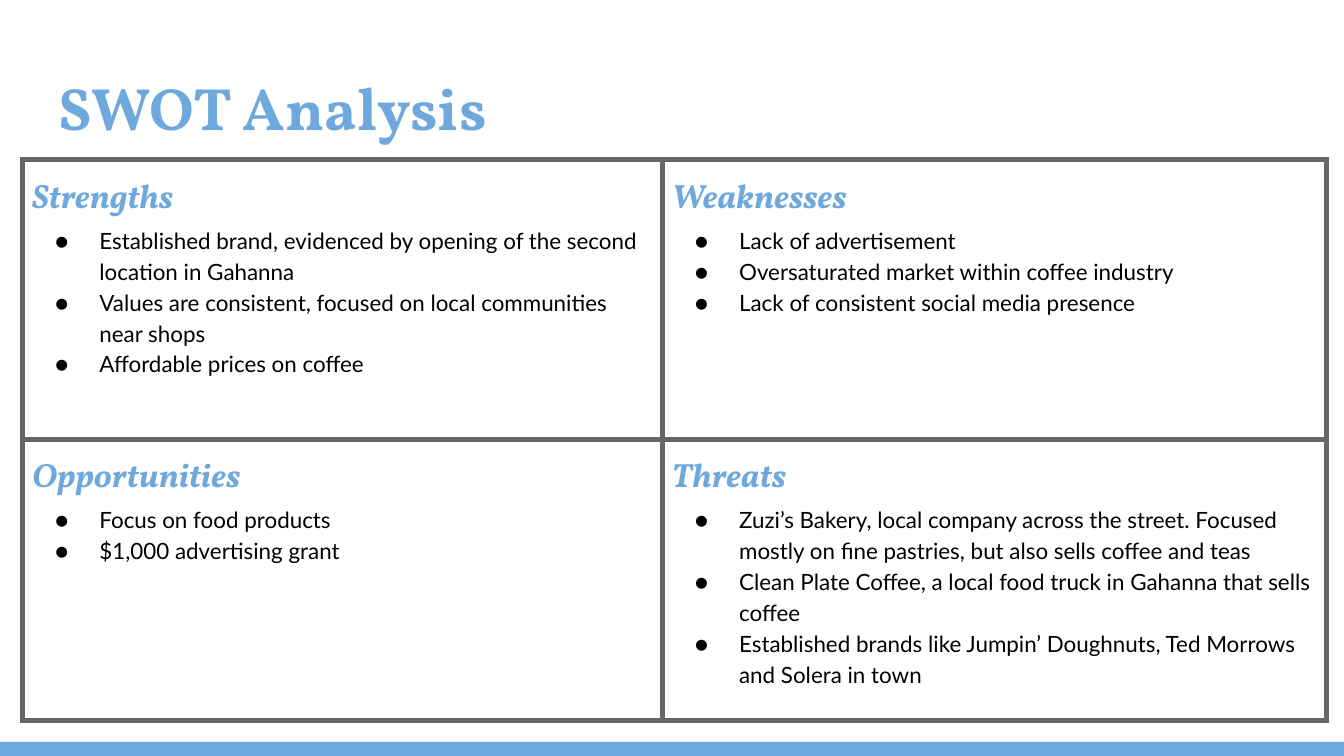
"""Build a SWOT analysis slide with a two-by-two table."""
from lxml import etree
from pptx import Presentation
from pptx import util as u
from pptx.dml.color import RGBColor
from pptx.enum import shapes, text
from pptx.oxml.ns import qn

SWOT = [
    [
        ("Strengths", [
            "Established brand, evidenced by opening of the second location in Gahanna",
            "Values are consistent, focused on local communities near shops",
            "Affordable prices on coffee",
        ]),
        ("Weaknesses", [
            "Lack of advertisement",
            "Oversaturated market within coffee industry",
            "Lack of consistent social media presence",
        ]),
    ],
    [
        ("Opportunities", [
            "Focus on food products",
            "$1,000 advertising grant",
        ]),
        ("Threats", [
            "Zuzi’s Bakery, local company across the street. Focused mostly on fine pastries, "
            "but also sells coffee and teas",
            "Clean Plate Coffee, a local food truck in Gahanna that sells coffee",
            "Established brands like Jumpin’ Doughnuts, Ted Morrows and Solera in town",
        ]),
    ],
]


def rgb(code):
    return RGBColor.from_string(code)


class SwotSlide:
    accent, ink, grid = "6FA8DC", "000000", "666666"
    display, body = "Vollkorn", "Lato"

    def __init__(self, deck):
        self.slide = deck.slides.add_slide(deck.slide_layouts[6])

    def style(self, paragraph, face, size, color, bold=False, italic=False):
        font = paragraph.font
        font.name, font.size = face, u.Pt(size)
        font.bold, font.italic = bold, italic
        font.color.rgb = rgb(color)

    def band(self, left, top, width, height):
        band = self.slide.shapes.add_shape(
            shapes.MSO_SHAPE.RECTANGLE, *map(u.Inches, (left, top, width, height)))
        band.shadow.inherit = False
        band.fill.solid()
        band.fill.fore_color.rgb = rgb(self.accent)
        band.line.fill.background()

    def title(self, wording, left, top, width, height):
        frame = self.slide.shapes.add_textbox(
            *map(u.Inches, (left, top, width, height))).text_frame
        frame.word_wrap = True
        frame.vertical_anchor = text.MSO_ANCHOR.TOP
        frame.margin_left = frame.margin_right = u.Inches(0.1)
        frame.margin_top = frame.margin_bottom = u.Inches(0.1)
        heading = frame.paragraphs[0]
        heading.text = wording
        self.style(heading, self.display, 32, self.accent, bold=True)

    def bullet(self, paragraph):
        props = paragraph._p.get_or_add_pPr()
        props.set("marL", str(u.Inches(0.5)))
        props.set("indent", str(u.Inches(-0.33)))
        etree.SubElement(props, qn("a:buSzPts"), val="1200")
        etree.SubElement(props, qn("a:buFont"), typeface=self.body)
        etree.SubElement(props, qn("a:buChar"), char="●")

    def borders(self, cell, points):
        props = cell._tc.get_or_add_tcPr()
        for place, side in enumerate(("lnL", "lnR", "lnT", "lnB")):
            line = etree.Element(qn(f"a:{side}"), w=str(u.Pt(points)))
            fill = etree.SubElement(line, qn("a:solidFill"))
            etree.SubElement(fill, qn("a:srgbClr"), val=self.grid)
            props.insert(place, line)

    def quadrant(self, cell, name, points):
        cell.margin_left = cell.margin_right = u.Inches(0.07)
        cell.margin_top = cell.margin_bottom = u.Inches(0.07)
        cell.vertical_anchor = text.MSO_ANCHOR.TOP
        cell.fill.background()
        self.borders(cell, 3)
        heading = cell.text_frame.paragraphs[0]
        heading.text = name
        heading.line_spacing = 1.15
        self.style(heading, self.display, 18, self.accent, bold=True, italic=True)
        for point in points:
            item = cell.text_frame.add_paragraph()
            item.text = point
            item.line_spacing = 1.15
            self.bullet(item)
            self.style(item, self.body, 12, self.ink)

    def matrix(self, rows, left, top, widths, heights):
        table = self.slide.shapes.add_table(
            len(heights), len(widths), u.Inches(left), u.Inches(top),
            u.Inches(sum(widths)), u.Inches(sum(heights))).table
        table.first_row = table.horz_banding = False
        for column, width in zip(table.columns, widths):
            column.width = u.Inches(width)
        for row, height, quadrants in zip(table.rows, heights, rows):
            row.height = u.Inches(height)
            for cell, (name, points) in zip(row.cells, quadrants):
                self.quadrant(cell, name, points)


def main():
    deck = Presentation()
    deck.slide_width = u.Inches(10)
    deck.slide_height = deck.slide_width * 9 // 16
    swot = SwotSlide(deck)
    swot.band(0, 5.52, 10, 0.11)
    swot.title("SWOT Analysis", 0.34, 0.43, 9.32, 0.68)
    swot.matrix(SWOT, 0.17, 1.19, (4.76, 4.94), (2.08, 2.09))
    deck.save("out.pptx")


if __name__ == "__main__":
    main()
